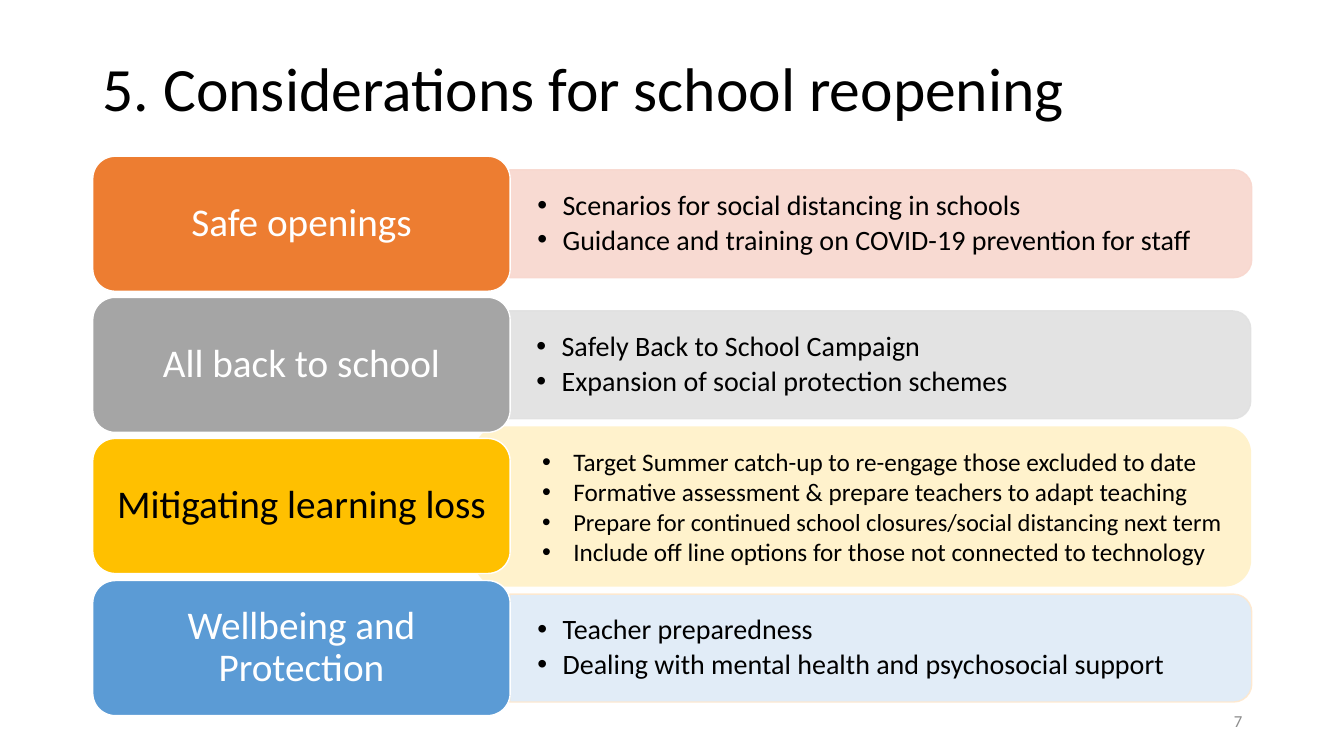
from lxml.etree import SubElement
from pptx import Presentation
from pptx.dml.color import RGBColor
from pptx.enum.shapes import MSO_SHAPE
from pptx.enum.text import MSO_ANCHOR, PP_ALIGN
from pptx.oxml.ns import qn
from pptx.util import Pt

SCALE = 9144
BLACK = RGBColor(0x00, 0x00, 0x00)
WHITE = RGBColor(0xFF, 0xFF, 0xFF)
GRAY_TEXT = RGBColor(0x8C, 0x8C, 0x8C)
ORANGE = RGBColor(0xED, 0x7D, 0x31)
GRAY = RGBColor(0xA5, 0xA5, 0xA5)
GOLD = RGBColor(0xFF, 0xC0, 0x00)
BLUE = RGBColor(0x5B, 0x9B, 0xD5)
PALE_ORANGE = RGBColor(0xF8, 0xD7, 0xCE)
PALE_GRAY = RGBColor(0xE1, 0xE1, 0xE1)
PALE_GOLD = RGBColor(0xFF, 0xF2, 0xCC)
PALE_BLUE = RGBColor(0xDE, 0xEB, 0xF7)
CREAM = RGBColor(0xFF, 0xE8, 0xCC)

LABEL_LEFT, LABEL_TOP, LABEL_WIDTH, LABEL_HEIGHT = 92, 155, 414, 134
ROW_SPAN = 421
PANEL_LEFT, PANEL_WIDTH, PANEL_HEIGHT = 506, 736, 107

ROWS = [
    ("Safe openings", ORANGE, WHITE, PALE_ORANGE, PALE_ORANGE, 0,
     ["Scenarios for social distancing in schools",
      "Guidance and training on COVID-19 prevention for staff"]),
    ("All back to school", GRAY, WHITE, PALE_GRAY, PALE_GRAY, -1,
     ["Safely Back to School Campaign",
      "Expansion of social protection schemes"]),
    ("Mitigating learning loss", GOLD, BLACK, None, None, 0, []),
    ("Wellbeing and Protection", BLUE, WHITE, PALE_BLUE, CREAM, 0,
     ["Teacher preparedness",
      "Dealing with mental health and psychosocial support"]),
]

LEARNING_ACTIONS = [
    ("Target Summer catch-up to re-engage those excluded to date", 18),
    ("Formative assessment & prepare teachers to adapt teaching", 18),
    ("Prepare for continued school closures/social distancing next term", 17.5),
    ("Include off line options for those not connected to technology", 18),
]


def px(value):
    return value * SCALE


class SlideBuilder:
    font = "Calibri"

    def __init__(self, page):
        self.page = page

    def frame(self, shape, inset_x=10, inset_y=5):
        frame = shape.text_frame
        frame.word_wrap = True
        frame.vertical_anchor = MSO_ANCHOR.MIDDLE
        frame.margin_left = frame.margin_right = px(inset_x)
        frame.margin_top = frame.margin_bottom = px(inset_y)
        return frame

    def add_lines(self, frame, lines, color, align=PP_ALIGN.LEFT, spacing=1.0, after=0, bullet=None):
        for number, (text, size) in enumerate(lines):
            paragraph = frame.add_paragraph() if number else frame.paragraphs[0]
            paragraph.text = text
            paragraph.alignment = align
            paragraph.line_spacing = spacing
            paragraph.space_after = Pt(after)
            paragraph.font.name = self.font
            paragraph.font.size = Pt(size)
            paragraph.font.color.rgb = color
            if bullet:
                margin, hanging = bullet
                properties = paragraph._p.get_or_add_pPr()
                properties.set("marL", str(px(margin)))
                properties.set("indent", str(-px(hanging)))
                mark_font = properties.makeelement(qn("a:buFont"), {"typeface": "Arial"})
                mark = properties.makeelement(qn("a:buChar"), {"char": "•"})
                properties.insert_element_before(mark_font, "a:tabLst", "a:defRPr", "a:extLst")
                properties.insert_element_before(mark, "a:tabLst", "a:defRPr", "a:extLst")

    def text(self, left, top, width, height, lines, color=BLACK, insets=(10, 5), **style):
        box = self.page.shapes.add_textbox(px(left), px(top), px(width), px(height))
        self.add_lines(self.frame(box, *insets), lines, color, **style)

    def shape(self, kind, left, top, width, height, fill, line=None):
        shape = self.page.shapes.add_shape(kind, px(left), px(top), px(width), px(height))
        shape.shadow.inherit = False
        shape.fill.solid()
        shape.fill.fore_color.rgb = fill
        if line is None:
            shape.line.fill.background()
        else:
            shape.line.color.rgb = line
            shape.line.width = Pt(1)
        return shape

    def label(self, top, text, fill, color):
        shape = self.shape(MSO_SHAPE.ROUNDED_RECTANGLE, LABEL_LEFT, top,
                           LABEL_WIDTH, LABEL_HEIGHT, fill, WHITE)
        self.add_lines(self.frame(shape, 12, 6), [(text, 28)], color,
                       align=PP_ALIGN.CENTER, spacing=0.9)

    def panel(self, left, middle, fill, line, bullets):
        shape = self.shape(MSO_SHAPE.ROUND_2_SAME_RECTANGLE,
                           left + (PANEL_WIDTH - PANEL_HEIGHT) // 2, middle - PANEL_WIDTH // 2,
                           PANEL_HEIGHT, PANEL_WIDTH, fill, line)
        shape.rotation = 90
        for color in shape._element.spPr.iter(qn("a:srgbClr")):
            SubElement(color, qn("a:alpha"), val="90000")
        self.text(left, middle - 48, 731, 96, [(bullet, 20) for bullet in bullets],
                  insets=(27, 14), spacing=0.9, after=3, bullet=(25, 25))

    def learning_panel(self):
        shape = self.shape(MSO_SHAPE.ROUNDED_RECTANGLE, 470, 423, 771, 159, PALE_GOLD)
        self.add_lines(self.frame(shape), LEARNING_ACTIONS, BLACK, bullet=(81, 31))


def main():
    deck = Presentation()
    deck.slide_width, deck.slide_height = px(1333), px(750)
    builder = SlideBuilder(deck.slides.add_slide(deck.slide_layouts[6]))
    builder.learning_panel()
    for row, (name, fill, color, pale, outline, shift, bullets) in enumerate(ROWS):
        top = LABEL_TOP + row * ROW_SPAN // 3
        if bullets:
            builder.panel(PANEL_LEFT + shift, top + LABEL_HEIGHT // 2, pale, outline, bullets)
        builder.label(top, name, fill, color)
    builder.text(92, 40, 1150, 101, [("5. Considerations for school reopening", 44)], spacing=0.9)
    builder.text(942, 695, 300, 40, [("7", 12)], GRAY_TEXT, align=PP_ALIGN.RIGHT)
    deck.save("out.pptx")


if __name__ == "__main__":
    main()
